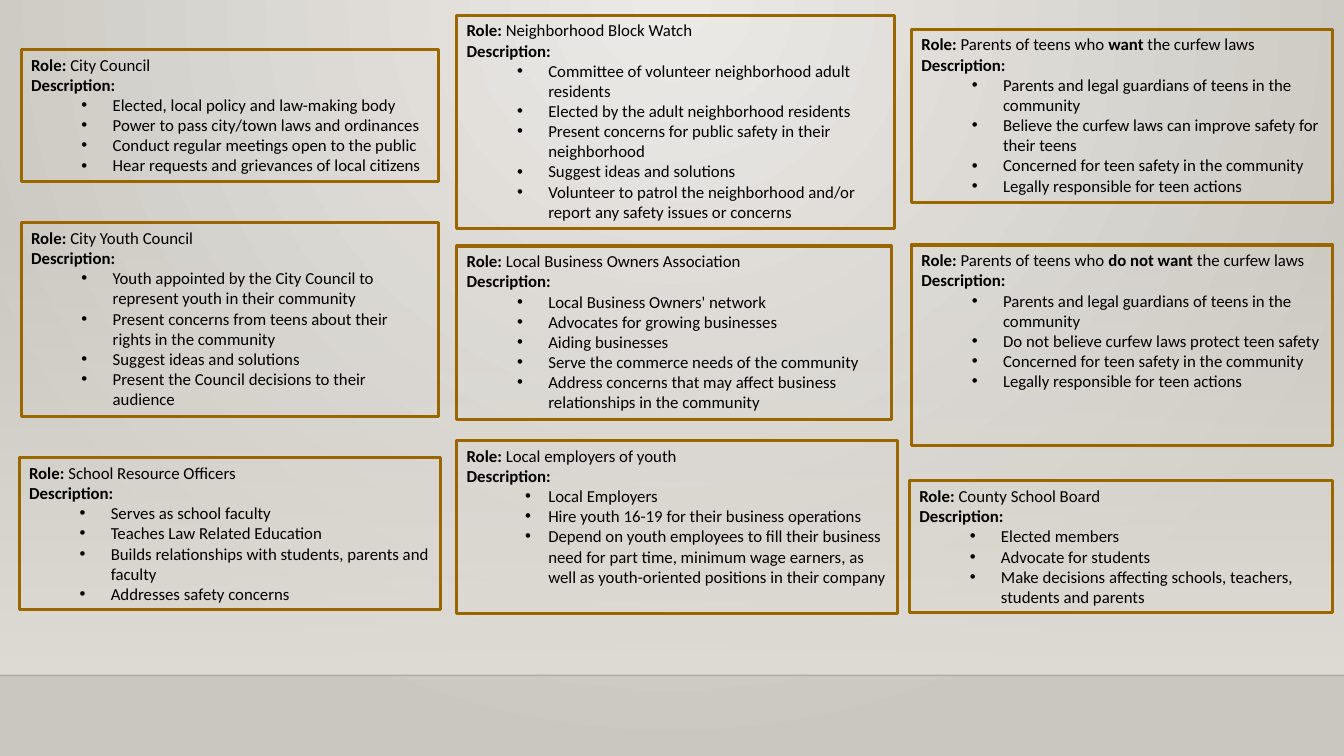
from lxml import etree
from pptx import Presentation
from pptx.dml.color import RGBColor
from pptx.enum import shapes, text
from pptx.oxml.ns import qn
from pptx.util import Inches, Pt

COLORS = {"glow": "ECEAE7", "edge": "CAC7C1", "wall": "DFDBD5",
          "floor_line": "000001", "border": "996600", "text": "000000"}
FONT = "Calibri"
INDENT, HANGING = 0.81, 0.31

# Left, top, width, height, role, bullet hanging, description; ** marks bold
ROLES = [
    (0.21, 0.49, 4.14, 1.31, "City Council", HANGING, [
        "Elected, local policy and law-making body",
        "Power to pass city/town laws and ordinances",
        "Conduct regular meetings open to the public",
        "Hear requests and grievances of local citizens"]),
    (0.21, 2.21, 4.14, 1.92, "City Youth Council", HANGING, [
        "Youth appointed by the City Council to represent youth in their community",
        "Present concerns from teens about their rights in the community",
        "Suggest ideas and solutions",
        "Present the Council decisions to their audience"]),
    (0.19, 4.54, 4.18, 1.51, "School Resource Officers", HANGING, [
        "Serves as school faculty",
        "Teaches Law Related Education",
        "Builds relationships with students, parents and faculty",
        "Addresses safety concerns"]),
    (4.53, 0.15, 4.34, 2.12, "Neighborhood Block Watch", HANGING, [
        "Committee of volunteer neighborhood adult residents",
        "Elected by the adult neighborhood residents",
        "Present concerns for public safety in their neighborhood",
        "Suggest ideas and solutions",
        "Volunteer to patrol the neighborhood and/or report any safety issues or concerns"]),
    (4.53, 2.44, 4.31, 1.72, "Local Business Owners Association", HANGING, [
        "Local Business Owners' network",
        "Advocates for growing businesses",
        "Aiding businesses",
        "Serve the commerce needs of the community",
        "Address concerns that may affect business relationships in the community"]),
    (4.53, 4.37, 4.37, 1.72, "Local employers of youth", 0.23, [
        "Local Employers",
        "Hire youth 16-19 for their business operations",
        "Depend on youth employees to fill their business need for part time, "
        "minimum wage earners, as well as youth-oriented positions in their company"]),
    (9.04, 0.29, 4.18, 1.72, "Parents of teens who **want** the curfew laws", HANGING, [
        "Parents and legal guardians of teens in the community",
        "Believe the curfew laws can improve safety for their teens",
        "Concerned for teen safety in the community",
        "Legally responsible for teen actions"]),
    (9.04, 2.43, 4.18, 1.99, "Parents of teens who **do not want **the curfew laws", HANGING, [
        "Parents and legal guardians of teens in the community",
        "Do not believe curfew laws protect teen safety",
        "Concerned for teen safety in the community",
        "Legally responsible for teen actions"]),
    (9.02, 4.77, 4.20, 1.31, "County School Board", HANGING, [
        "Elected members",
        "Advocate for students",
        "Make decisions affecting schools, teachers, students and parents"]),
]


def set_gradient(fill, first, last):
    fill.gradient()
    for stop, name, position in zip(fill.gradient_stops, (first, last), (0, 1)):
        stop.color.rgb = RGBColor.from_string(COLORS[name])
        stop.position = position


def set_alpha(parent, percent):
    color = next(parent.iter(qn("a:srgbClr")))
    etree.SubElement(color, qn("a:alpha"), val=str(percent * 1000))


deck = Presentation()
deck.slide_width, deck.slide_height = Inches(13.33), Inches(7.5)
slide = deck.slides.add_slide(deck.slide_layouts[6])

# Background: radial glow from the top centre
set_gradient(slide.background.fill, "glow", "edge")
glow = next(slide.element.iter(qn("a:gradFill")))
glow.remove(glow.find(qn("a:lin")))
radial = etree.SubElement(glow, qn("a:path"), {"path": "circle"})
etree.SubElement(radial, qn("a:fillToRect"), l="43000", t="0", r="43000", b="100000")

# Wall that fades in towards the floor line
wall = slide.shapes.add_shape(shapes.MSO_SHAPE.RECTANGLE,
                              Inches(0), Inches(2.21), Inches(13.33), Inches(4.49))
wall.shadow.inherit = False
wall.line.fill.background()
set_gradient(wall.fill, "wall", "wall")
wall.fill.gradient_angle = 270
set_alpha(wall.element.spPr, 0)

floor_line = slide.shapes.add_connector(shapes.MSO_CONNECTOR.STRAIGHT,
                                        Inches(0), Inches(6.7), Inches(13.33), Inches(6.7))
floor_line.line.color.rgb = RGBColor.from_string(COLORS["floor_line"])
floor_line.line.width = Pt(1)
set_alpha(floor_line.element.spPr, 20)
etree.SubElement(floor_line.element.spPr, qn("a:effectLst"))

# Role cards
for left, top, width, height, role, hanging, duties in ROLES:
    card = slide.shapes.add_shape(shapes.MSO_SHAPE.RECTANGLE, Inches(left), Inches(top),
                                  Inches(width), Inches(height))
    card.shadow.inherit = False
    card.fill.background()
    card.line.color.rgb = RGBColor.from_string(COLORS["border"])
    card.line.width = Pt(2.25)
    frame = card.text_frame
    frame.word_wrap = True
    frame.vertical_anchor = text.MSO_ANCHOR.TOP

    lines = [f"**Role: **{role}", "**Description:**"] + duties
    for number, line in enumerate(lines):
        paragraph = frame.add_paragraph() if number else frame.paragraphs[0]
        paragraph.alignment = text.PP_ALIGN.LEFT
        if number >= 2:
            paragraph.level = 1
            properties = paragraph._p.get_or_add_pPr()
            properties.set("marL", str(Inches(INDENT)))
            properties.set("indent", str(-Inches(hanging)))
            etree.SubElement(properties, qn("a:buFont"), typeface="Arial")
            etree.SubElement(properties, qn("a:buChar"), char="•")
        for part, words in enumerate(line.split("**")):
            if words:
                run = paragraph.add_run()
                run.text = words
                run.font.name, run.font.size = FONT, Pt(12)
                run.font.bold = part % 2 == 1
                run.font.color.rgb = RGBColor.from_string(COLORS["text"])

deck.save("out.pptx")
